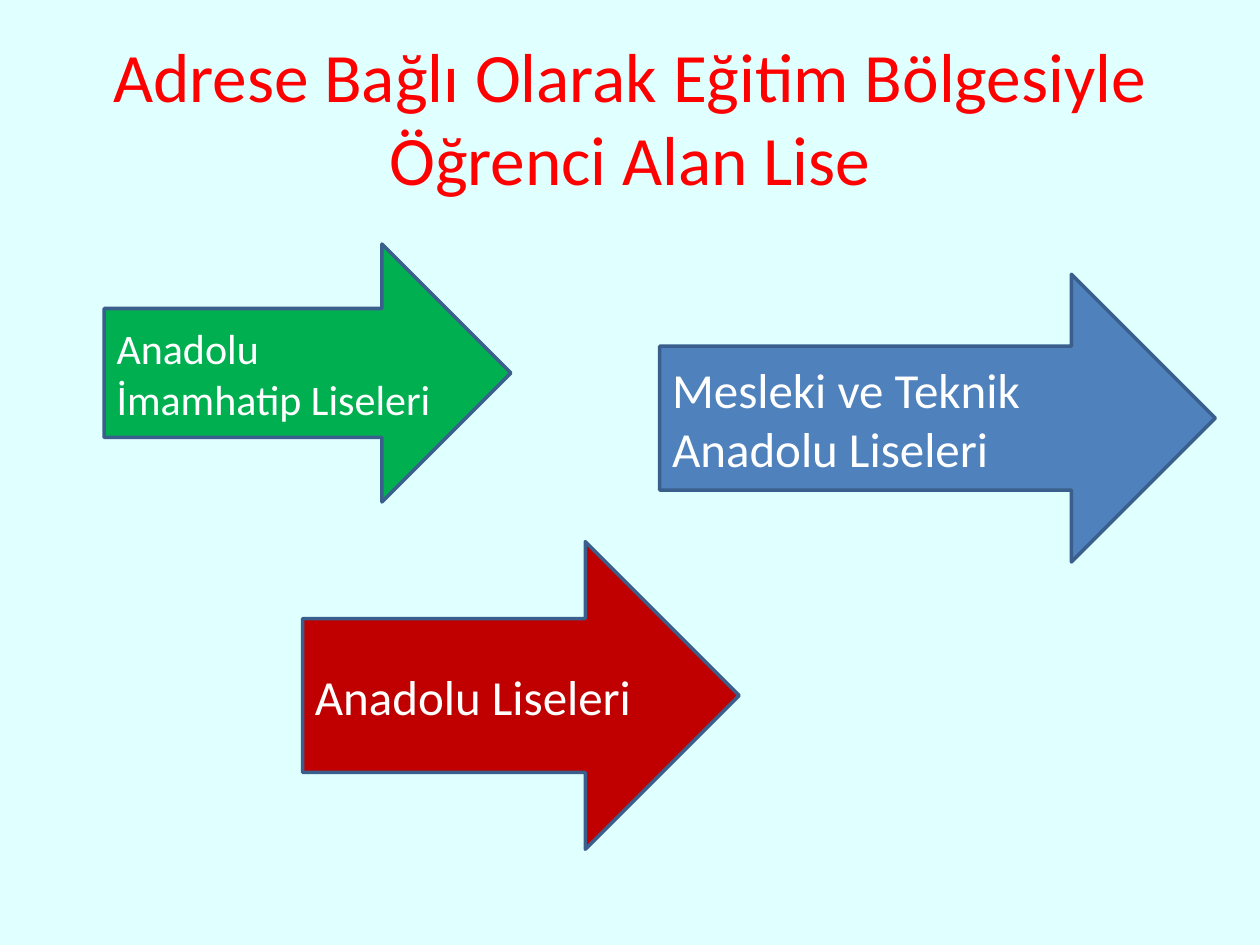
from pptx import Presentation
from pptx import util as u
from pptx.dml.color import RGBColor
from pptx.enum import shapes, text


def paint(target, color):
    """Give a fill one solid colour from a hex string."""
    target.solid()
    target.fore_color.rgb = RGBColor.from_string(color)


def write(tf, content, size, color="FFFFFF", align=text.PP_ALIGN.LEFT):
    """Write one wrapped, vertically centred paragraph."""
    tf.word_wrap = True
    tf.auto_size = text.MSO_AUTO_SIZE.NONE
    tf.vertical_anchor = text.MSO_ANCHOR.MIDDLE
    p = tf.paragraphs[0]
    p.alignment = align
    r = p.add_run()
    r.text = content
    r.font.name = "Calibri"
    r.font.size = u.Pt(size)
    paint(r.font.fill, color)


def add_title(s, box, content):
    """Place the title placeholder in its box."""
    sp = s.shapes.title
    sp.left, sp.top, sp.width, sp.height = map(u.Cm, box)
    write(sp.text_frame, content, 39.6, "FF0000", text.PP_ALIGN.CENTER)


def add_arrow(s, box, content, size, color):
    """Draw a labelled right arrow in its box."""
    sp = s.shapes.add_shape(shapes.MSO_SHAPE.RIGHT_ARROW, *map(u.Cm, box))
    sp.shadow.inherit = False
    paint(sp.fill, color)
    paint(sp.line.fill, "3A5F8C")
    sp.line.width = u.Pt(2)
    write(sp.text_frame, content, size)


def main():
    """Build and save the school types slide."""
    prs = Presentation()
    prs.slide_width, prs.slide_height = u.Cm(25.4), u.Cm(19.05)
    s = prs.slides.add_slide(prs.slide_layouts[5])
    paint(s.background.fill, "E0FFFF")
    add_title(s, (1.27, 0.76, 22.86, 3.18),
              "Adrese Bağlı Olarak Eğitim Bölgesiyle Öğrenci Alan Lise")
    schools = [
        ((6.1, 10.92, 8.8, 6.2), "Anadolu Liseleri", 28, "C00000"),
        ((2.1, 4.92, 8.2, 5.2), "Anadolu İmamhatip Liseleri", 24, "00B050"),
        ((13.3, 5.53, 11.2, 5.8), "Mesleki ve Teknik Anadolu Liseleri", 28, "4F81BD"),
    ]
    for school in schools:
        add_arrow(s, *school)
    prs.save("out.pptx")


if __name__ == "__main__":
    main()
